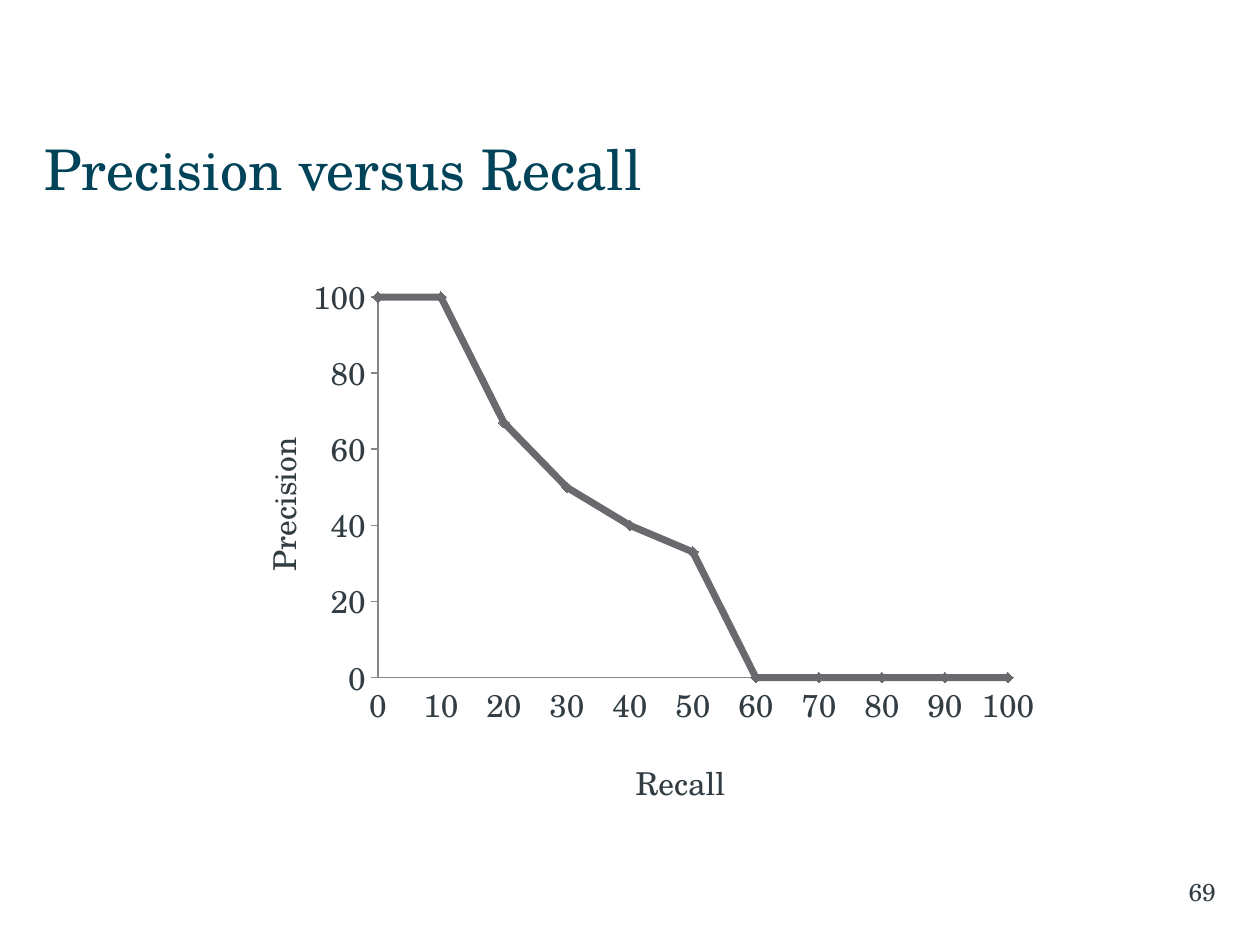
from dataclasses import dataclass

from lxml.etree import Element, SubElement
from pptx import Presentation
from pptx.chart.data import XyChartData
from pptx.dml.color import RGBColor
from pptx.enum.chart import XL_CHART_TYPE as ChartType, XL_MARKER_STYLE as Marker
from pptx.enum.chart import XL_TICK_MARK as Tick
from pptx.enum.text import MSO_ANCHOR as Anchor, PP_ALIGN as Align
from pptx.oxml.ns import qn
from pptx.util import Inches, Pt


@dataclass(frozen=True)
class Theme:
    font: str = "TeX Gyre Schola"
    title_color: RGBColor = RGBColor(0x01, 0x43, 0x59)
    text_color: RGBColor = RGBColor(0x32, 0x3D, 0x43)
    curve_color: RGBColor = RGBColor(0x69, 0x6A, 0x6D)
    axis_color: RGBColor = RGBColor(0x86, 0x86, 0x86)
    title_size: int = 32
    chart_size: int = 18
    number_size: int = 14


def place(parent, **shares):
    """Fix a chart part's position, given as shares of the chart's size."""
    for old_layout in parent.findall(qn("c:layout")):
        parent.remove(old_layout)
    layout = Element(qn("c:layout"))
    parent.insert(0 if parent.find(qn("c:tx")) is None else 1, layout)
    manual = SubElement(layout, qn("c:manualLayout"))
    if "w" in shares:
        SubElement(manual, qn("c:layoutTarget")).set("val", "inner")
    for mode in ("xMode", "yMode"):
        SubElement(manual, qn(f"c:{mode}")).set("val", "edge")
    for key, share in shares.items():
        SubElement(manual, qn(f"c:{key}")).set("val", str(share))


class SlideBuilder:
    def __init__(self, deck, theme):
        self.theme = theme
        self.size = (deck.slide_width, deck.slide_height) * 2
        self.slide = deck.slides.add_slide(deck.slide_layouts[6])

    def box(self, shares):
        """Turn shares of the slide's size into left, top, width, height."""
        return [round(share * length) for share, length in zip(shares, self.size)]

    def style(self, font, size, color):
        font.name, font.size, font.bold = self.theme.font, Pt(size), False
        font.color.rgb = color

    def text(self, wording, shares, size, color, align=Align.LEFT):
        frame = self.slide.shapes.add_textbox(*self.box(shares)).text_frame
        frame.word_wrap = True
        frame.vertical_anchor = Anchor.MIDDLE
        if align == Align.RIGHT:
            frame.margin_right = 0
        else:
            frame.margin_left = 0
        paragraph = frame.paragraphs[0]
        paragraph.text = wording
        paragraph.alignment = align
        self.style(paragraph.font, size, color)

    def axis(self, axis, label, step, tick, label_place):
        theme = self.theme
        axis.minimum_scale, axis.maximum_scale = 0, 100
        axis.major_unit = step
        axis.has_major_gridlines = False
        axis.major_tick_mark, axis.minor_tick_mark = tick, Tick.NONE
        axis.format.line.color.rgb = theme.axis_color
        axis.format.line.width = Pt(1)
        self.style(axis.tick_labels.font, theme.chart_size, theme.text_color)
        title = axis.axis_title
        title.text_frame.text = label
        self.style(title.text_frame.paragraphs[0].font, theme.chart_size, theme.text_color)
        place(title._element, **label_place)

    def scatter(self, points, shares):
        theme = self.theme
        data = XyChartData()
        curve_data = data.add_series("Series 1")
        for recall, precision in points:
            curve_data.add_data_point(recall, precision)
        chart = self.slide.shapes.add_chart(
            ChartType.XY_SCATTER_LINES, *self.box(shares), data).chart
        chart.has_title = chart.has_legend = False
        self.style(chart.font, theme.chart_size, theme.text_color)
        plot = chart.plots[0]
        plot.vary_by_categories = False
        curve = plot.series[0]
        curve.format.line.color.rgb = theme.curve_color
        curve.format.line.width = Pt(4)
        curve.marker.style, curve.marker.size = Marker.DIAMOND, 6
        for fill in (curve.marker.format.fill, curve.marker.format.line.fill):
            fill.solid()
            fill.fore_color.rgb = theme.curve_color
        self.axis(chart.category_axis, "Recall", 10, Tick.NONE, dict(x=0.5, y=0.87))
        self.axis(chart.value_axis, "Precision", 20, Tick.OUTSIDE, dict(x=0.05, y=0.3))
        plot_area = chart._chartSpace.find(".//" + qn("c:plotArea"))
        place(plot_area, x=0.2, y=0.06, w=0.75, h=0.68)


def main():
    deck = Presentation()
    deck.slide_width, deck.slide_height = Inches(10), Inches(7.5)
    theme = Theme()
    page = SlideBuilder(deck, theme)
    page.text("Precision versus Recall", (0.035, 0.13, 0.93, 0.095),
              theme.title_size, theme.title_color)
    page.text("69", (0.773, 0.921, 0.192, 0.045),
              theme.number_size, theme.text_color, Align.RIGHT)
    precisions = [100, 100, 67, 50, 40, 33, 0, 0, 0, 0, 0]
    page.scatter(zip(range(0, 101, 10), precisions), (1 / 6, 0.279, 2 / 3, 0.592))
    deck.save("out.pptx")


if __name__ == "__main__":
    main()
